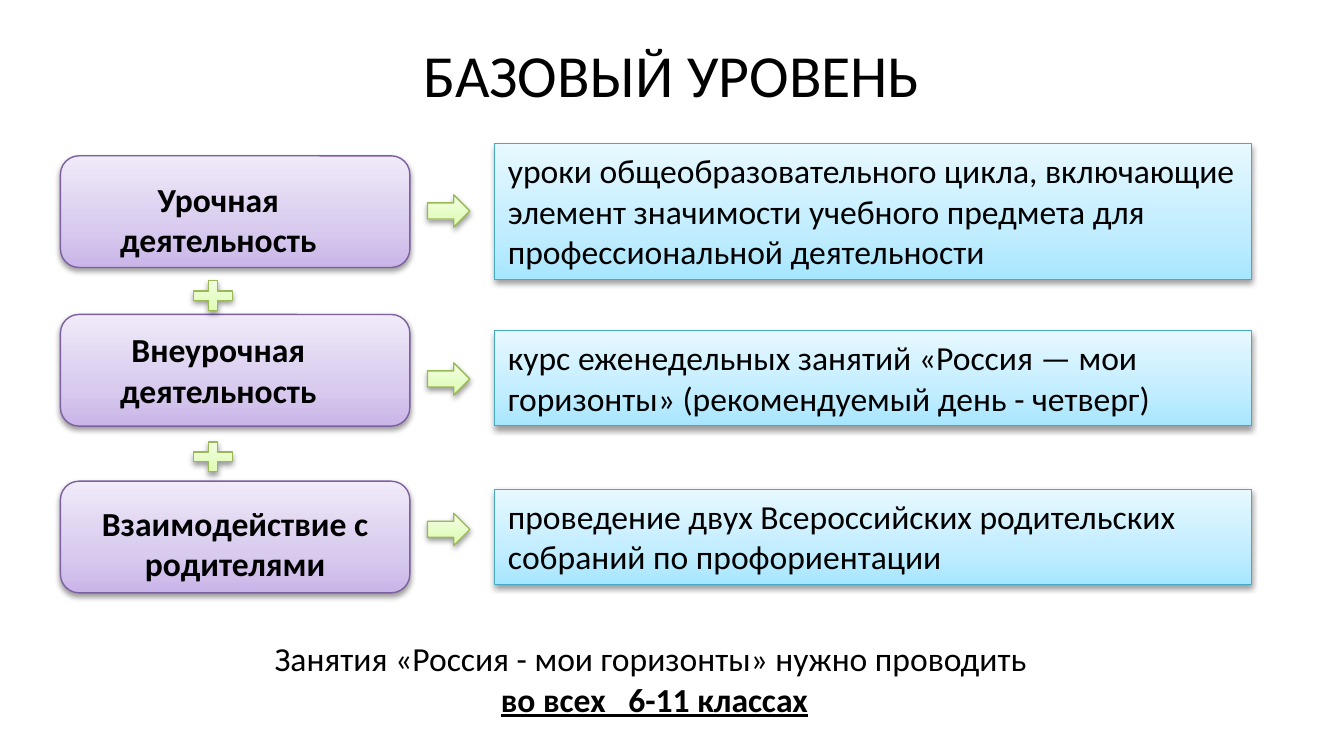
from copy import deepcopy

from lxml import etree
from pptx import Presentation
from pptx.dml.color import RGBColor
from pptx.enum.shapes import MSO_SHAPE
from pptx.enum.text import MSO_ANCHOR, MSO_AUTO_SIZE, PP_ALIGN
from pptx.oxml.ns import qn
from pptx.util import Pt

ROUND, RECT = MSO_SHAPE.ROUNDED_RECTANGLE, MSO_SHAPE.RECTANGLE
ARROW, PLUS = MSO_SHAPE.RIGHT_ARROW, MSO_SHAPE.MATH_PLUS
LEFT, CENTER = PP_ALIGN.LEFT, PP_ALIGN.CENTER
TOP, FIXED = MSO_ANCHOR.TOP, MSO_AUTO_SIZE.NONE
GROW = MSO_AUTO_SIZE.SHAPE_TO_FIT_TEXT

STOPS = (0, 0.35, 1)
# Line colour, then gradient colours from bottom to top
PURPLE = ("7D60A0", ("C9B5E8", "D8CBEE", "F0EAF9"))
BLUE = ("46AAC5", ("A7E6FF", "C1EDFF", "E7F8FF"))
GREEN = ("98B955", ("DAFDA7", "E4FCC2", "F5FFE7"))

# Card top; label text, left, top, width; info text, top, height; arrow top
ROWS = (
    (83.5, ("Урочная деятельность", 54.7, 92.2, 124.6),
     ("уроки общеобразовательного цикла, включающие элемент значимости "
      "учебного предмета для профессиональной деятельности", 77, 72.7), 104.4),
    (168.5, ("Внеурочная деятельность", 54.7, 172.8, 124.6),
     ("курс еженедельных занятий «Россия — мои горизонты» "
      "(рекомендуемый день - четверг)", 177.1, 51), 194.4),
    (257.8, ("Взаимодействие с родителями", 46.8, 265.7, 158.4),
     ("проведение двух Всероссийских родительских собраний "
      "по профориентации", 262.1, 51), 275),
)
PLUSES = (147.6, 234)


def color(code):
    return RGBColor.from_string(code)


class Deck:
    """Holds the text style and the current slide."""

    font = {"name": "Calibri", "size": Pt(18), "bold": False}

    def __init__(self, wide, high):
        self.prs = Presentation()
        self.prs.slide_width, self.prs.slide_height = Pt(wide), Pt(high)
        self.slide = self.prs.slides.add_slide(self.prs.slide_layouts[5])

    def label(self, shape, paras, align, fit=GROW):
        """Fill a shape with (text, format) paragraphs."""
        frame = shape.text_frame
        frame.word_wrap, frame.auto_size = True, fit
        frame.vertical_anchor = TOP
        for i, (text, style) in enumerate(paras):
            para = frame.add_paragraph() if i else frame.paragraphs[0]
            para.alignment = align
            run = para.add_run()
            run.text = text
            for key, value in {**self.font, **style}.items():
                setattr(run.font, key, value)
            run.font.color.rgb = color("000000")

    def title(self, text, box):
        shape = self.slide.shapes.title
        shape.left, shape.top, shape.width, shape.height = map(Pt, box)
        self.label(shape, [(text, {"size": Pt(32)})], CENTER, FIXED)

    def text(self, paras, box):
        shape = self.slide.shapes.add_textbox(*map(Pt, box))
        self.label(shape, paras, CENTER)

    def shape(self, kind, box, theme):
        shape = self.slide.shapes.add_shape(kind, *map(Pt, box))
        edge, shades = theme
        shape.line.color.rgb = color(edge)
        shape.line.width = Pt(0.75)
        self.blend(shape, shades)
        self.shade(shape)
        return shape

    def blend(self, shape, shades):
        """Apply a three-stop vertical gradient."""
        fill = shape.fill
        fill.gradient()
        fill.gradient_angle = 90
        stops = shape.element.spPr.find(qn("a:gradFill")).find(qn("a:gsLst"))
        stops.append(deepcopy(stops[0]))
        for stop, pos, code in zip(fill.gradient_stops, STOPS, shades):
            stop.position, stop.color.rgb = pos, color(code)

    def shade(self, shape):
        """Add a soft shadow below the shape."""
        shape.shadow.inherit = False
        effects = shape.element.spPr.find(qn("a:effectLst"))
        outer = etree.SubElement(
            effects, qn("a:outerShdw"), blurRad=str(Pt(3.1)),
            dist=str(Pt(1.6)), dir="5400000", rotWithShape="0")
        tint = etree.SubElement(outer, qn("a:srgbClr"), val="000000")
        etree.SubElement(tint, qn("a:alpha"), val="38000")

    def info(self, text, box):
        self.label(self.shape(RECT, box, BLUE), [(text, {})], LEFT)


def main():
    deck = Deck(720, 405)
    deck.title("БАЗОВЫЙ УРОВЕНЬ", (36, 16.6, 648, 37.4))
    for card, (name, x, y, wide), (text, top, high), arrow in ROWS:
        deck.shape(ROUND, (32.4, card, 187.2, 59.8), PURPLE)
        deck.text([(name, {"bold": True})], (x, y, wide, 51))
        deck.info(text, (265, top, 405.4, high))
        deck.shape(ARROW, (229, arrow, 22.7, 17.3), GREEN)
    for top in PLUSES:
        deck.shape(PLUS, (100.1, top, 28.1, 21.6), GREEN)
    deck.text([("Занятия «Россия - мои горизонты» нужно проводить ", {}),
               ("во всех   6-11 классах", {"bold": True, "underline": True})],
              (31.7, 338.4, 637.9, 51))
    deck.prs.save("out.pptx")


if __name__ == "__main__":
    main()
